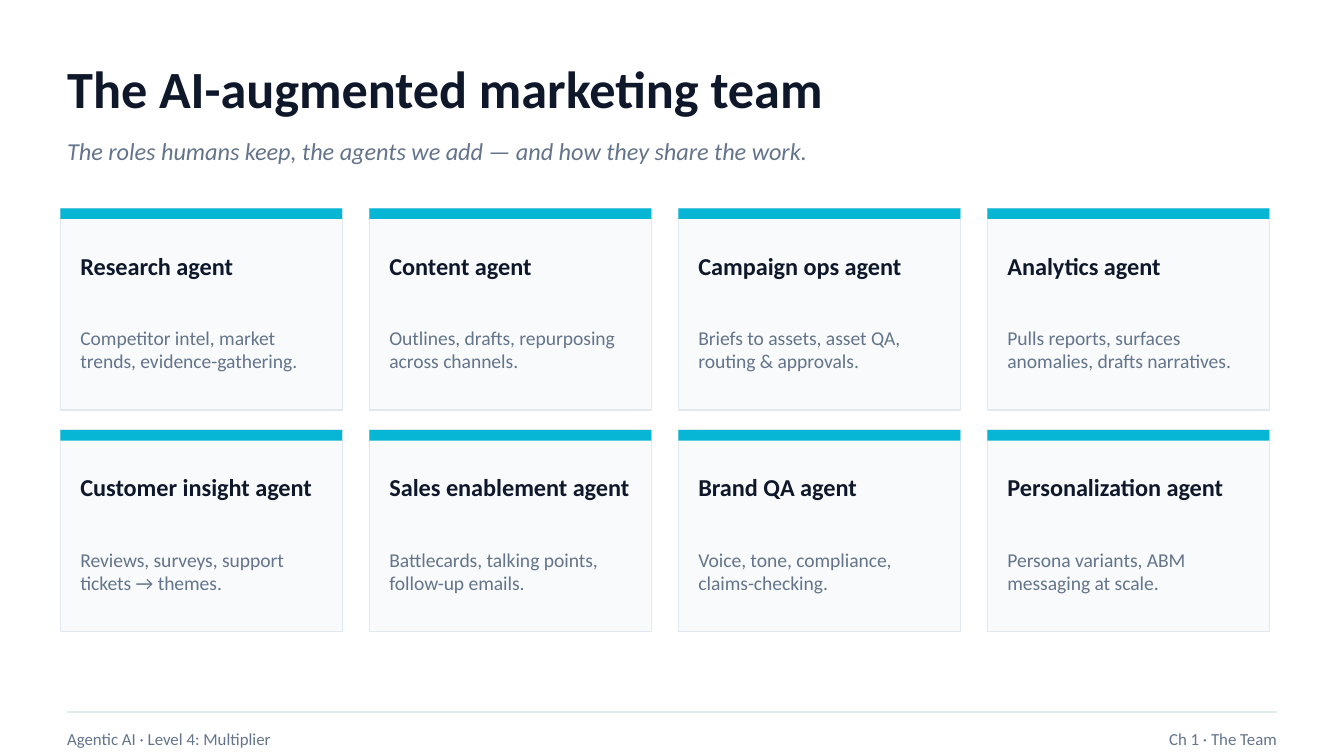
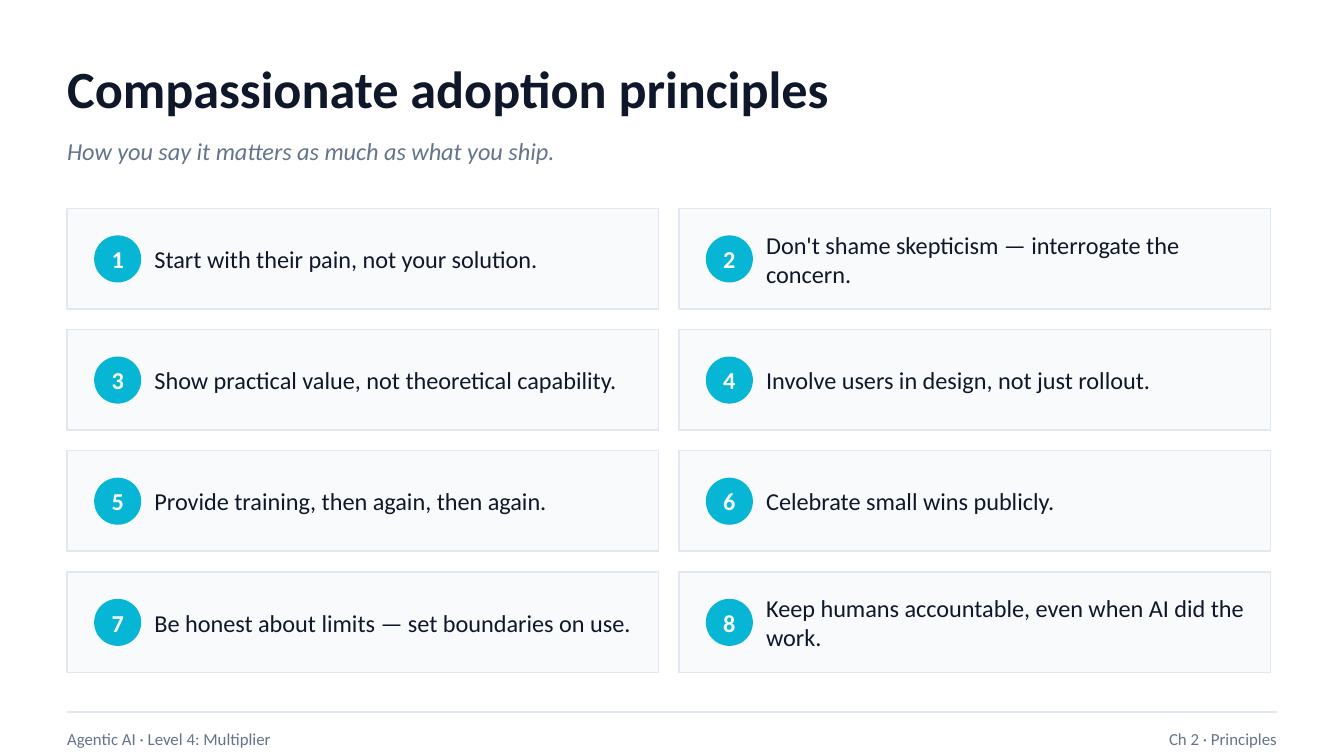
import dataclasses

import pptx
import pptx.dml.color
import pptx.enum.shapes
import pptx.enum.text
import pptx.oxml.ns
import pptx.util
from lxml import etree

Cm = pptx.util.Cm
Pt = pptx.util.Pt
SHAPE = pptx.enum.shapes.MSO_SHAPE
ALIGN = pptx.enum.text.PP_ALIGN


@dataclasses.dataclass(frozen=True)
class Theme:
    font: str = "Calibri"
    ink: str = "0F172A"
    muted: str = "64748B"
    panel: str = "F8FAFC"
    border: str = "E2E8F0"
    accent: str = "06B6D4"
    title: float = 28
    body: float = 13
    detail: float = 10.5
    footer: float = 9
    hairline: float = 0.75


def rgb(value):
    return pptx.dml.color.RGBColor.from_string(value)


def grid(items, columns, left, top, step_x, step_y):
    for i, item in enumerate(items):
        row, col = divmod(i, columns)
        yield left + col * step_x, top + row * step_y, item


class Deck:
    MARGIN = 1.27
    WIDTH = 22.86

    def __init__(self, prs, theme):
        self.prs = prs
        self.theme = theme
        self.s = None

    def fill_text(self, tf, text, size, color, bold=False, italic=False, align=ALIGN.LEFT, wrap=True):
        tf.word_wrap = wrap
        tf.auto_size = pptx.enum.text.MSO_AUTO_SIZE.NONE
        tf.vertical_anchor = pptx.enum.text.MSO_ANCHOR.MIDDLE
        tf.margin_left = tf.margin_right = tf.margin_top = tf.margin_bottom = 0
        p = tf.paragraphs[0]
        p.alignment = align
        r = p.add_run()
        r.text = text
        r.font.name = self.theme.font
        r.font.size = Pt(size)
        r.font.bold = bold
        r.font.italic = italic
        r.font.color.rgb = rgb(color)

    def text(self, x, y, w, h, text, size, color, **style):
        sp = self.s.shapes.add_textbox(Cm(x), Cm(y), Cm(w), Cm(h))
        self.fill_text(sp.text_frame, text, size, color, **style)

    def shape(self, kind, x, y, w, h, fill, line=None):
        sp = self.s.shapes.add_shape(kind, Cm(x), Cm(y), Cm(w), Cm(h))
        sp.shadow.inherit = False
        sp.fill.solid()
        sp.fill.fore_color.rgb = rgb(fill)
        if line:
            sp.line.color.rgb = rgb(line)
            sp.line.width = Pt(self.theme.hairline)
        else:
            sp.line.fill.background()
        return sp

    def panel(self, x, y, w, h):
        self.shape(SHAPE.RECTANGLE, x, y, w, h, self.theme.panel, self.theme.border)

    def rule(self, x, y, w):
        cn = self.s.shapes.add_connector(
            pptx.enum.shapes.MSO_CONNECTOR.STRAIGHT, Cm(x), Cm(y), Cm(x + w), Cm(y))
        cn.line.color.rgb = rgb(self.theme.border)
        cn.line.width = Pt(self.theme.hairline)
        etree.SubElement(cn._element.spPr, pptx.oxml.ns.qn("a:effectLst"))

    def title(self, text):
        sp = self.s.shapes.title
        sp.left, sp.top = Cm(self.MARGIN), Cm(0.89)
        sp.width, sp.height = Cm(self.WIDTH), Cm(1.52)
        self.fill_text(sp.text_frame, text, self.theme.title, self.theme.ink, bold=True)

    def footer(self, chapter):
        t = self.theme
        self.rule(self.MARGIN, 13.46, self.WIDTH)
        self.text(self.MARGIN, 13.59, 12.7, 0.76, "Agentic AI · Level 4: Multiplier", t.footer, t.muted)
        self.text(13.97, 13.59, 10.16, 0.76, chapter, t.footer, t.muted, align=ALIGN.RIGHT)

    def slide(self, title, subtitle, chapter):
        self.s = self.prs.slides.add_slide(self.prs.slide_layouts[5])
        self.title(title)
        self.text(self.MARGIN, 2.41, self.WIDTH, 0.89, subtitle,
                  self.theme.body, self.theme.muted, italic=True)
        self.footer(chapter)

    def agent_card(self, x, y, name, task):
        t = self.theme
        self.panel(x, y, 5.33, 3.81)
        self.shape(SHAPE.RECTANGLE, x, y, 5.33, 0.2, t.accent)
        self.text(x + 0.38, y + 0.51, 4.7, 1.14, name, t.body, t.ink, bold=True)
        self.text(x + 0.38, y + 1.65, 4.7, 2.03, task, t.detail, t.muted)

    def principle(self, x, y, number, text):
        t = self.theme
        self.panel(x, y, 11.18, 1.9)
        badge = self.shape(SHAPE.OVAL, x + 0.51, y + 0.51, 0.89, 0.89, t.accent)
        self.fill_text(badge.text_frame, str(number), t.body, t.panel,
                       bold=True, align=ALIGN.CENTER, wrap=False)
        self.text(x + 1.65, y + 0.13, 9.14, 1.65, text, t.body, t.ink)


AGENTS = [
    ("Research agent", "Competitor intel, market trends, evidence-gathering."),
    ("Content agent", "Outlines, drafts, repurposing across channels."),
    ("Campaign ops agent", "Briefs to assets, asset QA, routing & approvals."),
    ("Analytics agent", "Pulls reports, surfaces anomalies, drafts narratives."),
    ("Customer insight agent", "Reviews, surveys, support tickets → themes."),
    ("Sales enablement agent", "Battlecards, talking points, follow-up emails."),
    ("Brand QA agent", "Voice, tone, compliance, claims-checking."),
    ("Personalization agent", "Persona variants, ABM messaging at scale."),
]

PRINCIPLES = [
    "Start with their pain, not your solution.",
    "Don't shame skepticism — interrogate the concern.",
    "Show practical value, not theoretical capability.",
    "Involve users in design, not just rollout.",
    "Provide training, then again, then again.",
    "Celebrate small wins publicly.",
    "Be honest about limits — set boundaries on use.",
    "Keep humans accountable, even when AI did the work.",
]


def main():
    prs = pptx.Presentation()
    prs.slide_width, prs.slide_height = Cm(25.4), Cm(14.29)
    deck = Deck(prs, Theme())

    deck.slide("The AI-augmented marketing team",
               "The roles humans keep, the agents we add — and how they share the work.",
               "Ch 1 · The Team")
    for x, y, (name, task) in grid(AGENTS, 4, 1.14, 3.94, 5.84, 4.19):
        deck.agent_card(x, y, name, task)

    deck.slide("Compassionate adoption principles",
               "How you say it matters as much as what you ship.",
               "Ch 2 · Principles")
    for x, y, (number, text) in grid(enumerate(PRINCIPLES, 1), 2, 1.27, 3.94, 11.56, 2.29):
        deck.principle(x, y, number, text)

    prs.save("out.pptx")


if __name__ == "__main__":
    main()
